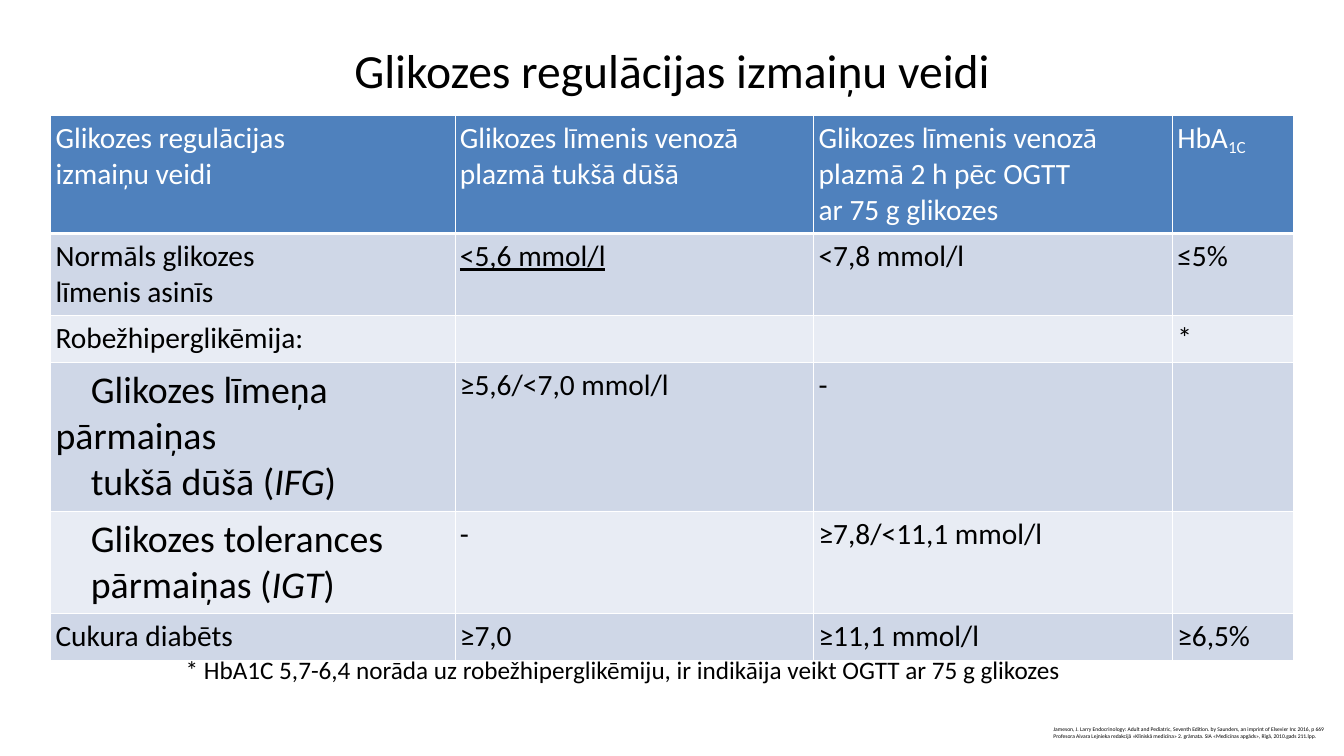
"""Build a slide with a table of the types of glucose regulation changes."""
from dataclasses import dataclass

from lxml import etree
from pptx import Presentation
from pptx import util as u
from pptx.dml.color import RGBColor
from pptx.enum import text
from pptx.oxml.ns import qn

FONT = "Calibri"
BLACK = RGBColor(0x00, 0x00, 0x00)
WHITE = RGBColor(0xFF, 0xFF, 0xFF)
HEADER_BLUE = RGBColor(0x4F, 0x81, 0xBD)
BAND_DARK = RGBColor(0xCF, 0xD7, 0xE7)
BAND_LIGHT = RGBColor(0xE8, 0xEC, 0xF4)
INSET = u.Cm(0.13)
SUBTYPE_INDENT = u.Cm(0.89)
COLUMN_WIDTHS = (10.19, 9.04, 9.04, 3.05)
ROW_HEIGHTS = (2.97, 2.06, 1.16, 3.76, 2.58, 1.16)
THIN, THICK = 0.25, 2


@dataclass(frozen=True)
class Span:
    """A piece of text with one look."""
    words: str
    italic: bool = False
    underline: bool = False
    subscript: bool = False


@dataclass(frozen=True)
class Line:
    """A paragraph made of spans."""
    spans: tuple[Span, ...]
    size: float = 21
    indented: bool = False


@dataclass(frozen=True)
class Note:
    """A text box with its place in centimetres."""
    left: float
    top: float
    width: float
    height: float
    lines: tuple[Line, ...]


def plain(*lines: str, size: float = 21) -> tuple[Line, ...]:
    """Return one plain paragraph for each string."""
    return tuple(Line((Span(words),), size) for words in lines)


def subtype(first: str, second: str, abbreviation: str) -> tuple[Line, ...]:
    """Return the indented name of a subtype with its italic abbreviation."""
    ending = (Span(f"{second} ("), Span(abbreviation, italic=True), Span(")"))
    return Line((Span(first),), 27, True), Line(ending, 27, True)


TITLE = plain("Glikozes regulācijas izmaiņu veidi", size=34)
ROWS = (
    (plain("Glikozes regulācijas", "izmaiņu veidi"),
     plain("Glikozes līmenis venozā plazmā tukšā dūšā"),
     plain("Glikozes līmenis venozā plazmā 2 h pēc OGTT\nar 75 g glikozes"),
     (Line((Span("HbA"), Span("1C", subscript=True))),)),
    (plain("Normāls glikozes", "līmenis asinīs"),
     (Line((Span("<5,6 mmol/l", underline=True),)),),
     plain("<7,8 mmol/l"), plain("≤5%")),
    (plain("Robežhiperglikēmija:"), (), (), plain("*")),
    (subtype("Glikozes līmeņa pārmaiņas", "tukšā dūšā", "IFG"),
     plain("≥5,6/<7,0 mmol/l"), plain("-"), ()),
    (subtype("Glikozes tolerances", "pārmaiņas", "IGT"),
     plain("-"), plain("≥7,8/<11,1 mmol/l"), ()),
    (plain("Cukura diabēts"), plain("≥7,0"), plain("≥11,1 mmol/l"), plain("≥6,5%")),
)
NOTES = (
    Note(26.42, 18.16, 7.85, 0.79, plain(
        "Jameson, J. Larry Endocrinology: Adult and Pediatric, Seventh Edition. "
        "by Saunders, an imprint of Elsevier Inc 2016, p 669",
        "Profesora Aivara Lejnieka redakcijā «Klīniskā medicīna» 2. grāmata. "
        "SIA «Medicīnas apgāds», Rīgā, 2010.gads 211.lpp.", size=4)),
    Note(4.55, 16.36, 23.32, 1.73, plain(
        "* HbA1C 5,7-6,4 norāda uz robežhiperglikēmiju, "
        "ir indikāija veikt OGTT ar 75 g glikozes", size=18)),
)


def add_span(paragraph, span: Span, size: float, color: RGBColor) -> None:
    """Add a span to a paragraph, with its line breaks."""
    for number, words in enumerate(span.words.split("\n")):
        if number:
            paragraph.add_line_break()
        run = paragraph.add_run()
        run.text = words
        run.font.name = FONT
        run.font.size = u.Pt(size)
        run.font.color.rgb = color
        run.font.bold = False
        run.font.italic = span.italic
        run.font.underline = span.underline
        if span.subscript:
            run.font._element.set("baseline", "-18000")


def write_lines(frame, lines: tuple[Line, ...], color: RGBColor, alignment) -> None:
    """Fill a text frame with paragraphs."""
    for number, line in enumerate(lines):
        paragraph = frame.add_paragraph() if number else frame.paragraphs[0]
        paragraph.alignment = alignment
        if line.indented:
            paragraph.level = 1
            properties = paragraph._p.get_or_add_pPr()
            properties.set("marL", "0")
            properties.set("indent", str(SUBTYPE_INDENT))
        for span in line.spans:
            add_span(paragraph, span, line.size, color)


def set_insets(box) -> None:
    """Give a cell or a text frame the same margin on all sides."""
    box.margin_left = box.margin_right = INSET
    box.margin_top = box.margin_bottom = INSET


def add_border(cell, side: str, width: float) -> None:
    """Draw one white border of a cell."""
    border = etree.SubElement(cell._tc.get_or_add_tcPr(), qn(f"a:ln{side}"), w=str(u.Pt(width)))
    fill = etree.SubElement(border, qn("a:solidFill"))
    etree.SubElement(fill, qn("a:srgbClr"), val=str(WHITE))


def format_cell(cell, row: int) -> None:
    """Set the margins, borders and fill of a cell."""
    set_insets(cell)
    widths = {"L": THIN, "R": THIN, "T": THICK if row == 1 else THIN, "B": THICK if row == 0 else THIN}
    for side, width in widths.items():
        add_border(cell, side, width)
    cell.fill.solid()
    band = BAND_DARK if row % 2 else BAND_LIGHT
    cell.fill.fore_color.rgb = band if row else HEADER_BLUE


def add_glucose_table(slide) -> None:
    """Add the table of glucose levels."""
    table = slide.shapes.add_table(
        len(ROWS), len(COLUMN_WIDTHS), u.Cm(1.27), u.Cm(2.9),
        u.Cm(sum(COLUMN_WIDTHS)), u.Cm(sum(ROW_HEIGHTS))).table
    for column, width in zip(table.columns, COLUMN_WIDTHS):
        column.width = u.Cm(width)
    for row, (cells, height) in enumerate(zip(ROWS, ROW_HEIGHTS)):
        table.rows[row].height = u.Cm(height)
        for column, lines in enumerate(cells):
            cell = table.cell(row, column)
            format_cell(cell, row)
            write_lines(cell.text_frame, lines, BLACK if row else WHITE, text.PP_ALIGN.LEFT)


def add_title(slide) -> None:
    """Place and fill the title."""
    shape = slide.shapes.title
    shape.left, shape.top = u.Cm(5.51), u.Cm(0.15)
    shape.width, shape.height = u.Cm(22.86), u.Cm(3.18)
    frame = shape.text_frame
    set_insets(frame)
    frame.auto_size = text.MSO_AUTO_SIZE.NONE
    frame.vertical_anchor = text.MSO_ANCHOR.MIDDLE
    write_lines(frame, TITLE, BLACK, text.PP_ALIGN.CENTER)


def add_note(slide, note: Note) -> None:
    """Add a text box with a note."""
    shape = slide.shapes.add_textbox(u.Cm(note.left), u.Cm(note.top), u.Cm(note.width), u.Cm(note.height))
    frame = shape.text_frame
    frame.word_wrap = True
    frame.auto_size = text.MSO_AUTO_SIZE.SHAPE_TO_FIT_TEXT
    set_insets(frame)
    write_lines(frame, note.lines, BLACK, text.PP_ALIGN.LEFT)


def main() -> None:
    """Build and save the presentation."""
    presentation = Presentation()
    presentation.slide_width, presentation.slide_height = u.Cm(33.87), u.Cm(19.05)
    slide = presentation.slides.add_slide(presentation.slide_layouts[5])
    add_title(slide)
    add_glucose_table(slide)
    for note in NOTES:
        add_note(slide, note)
    presentation.save("out.pptx")


if __name__ == "__main__":
    main()
